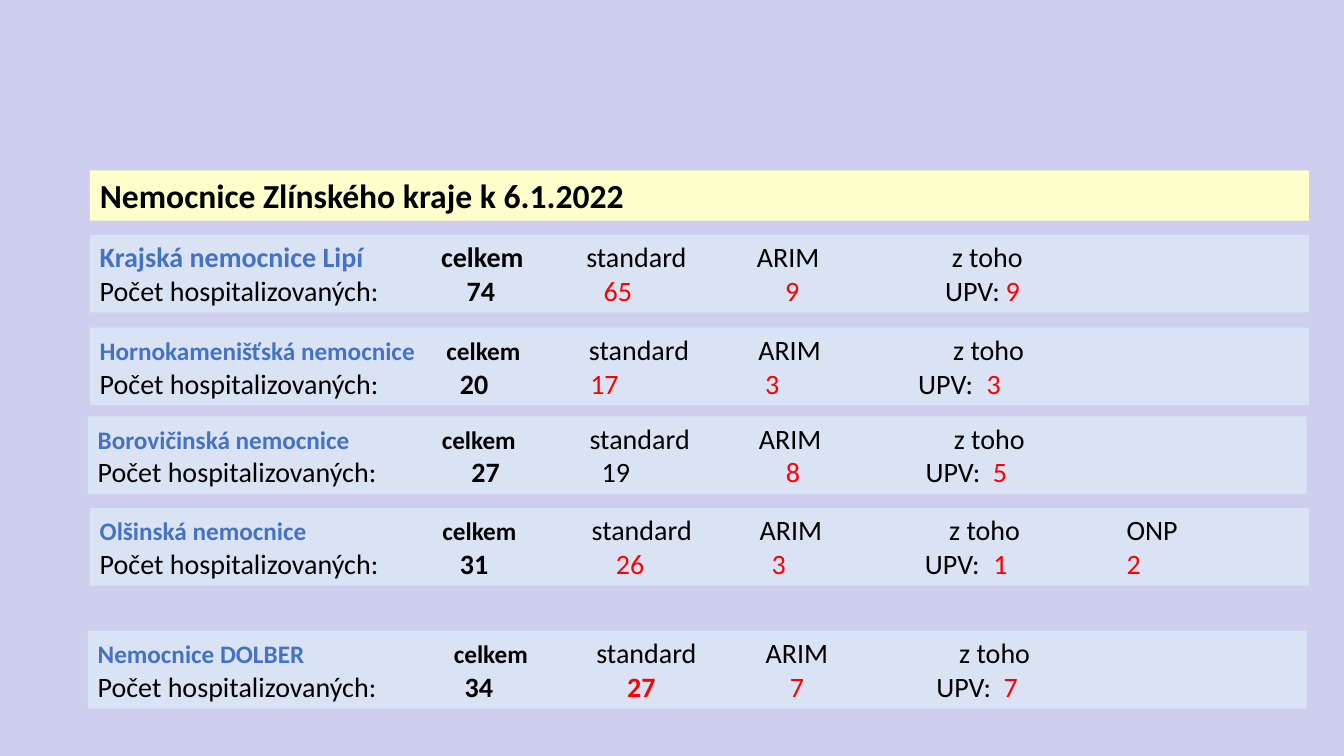
from lxml.etree import SubElement
from pptx import Presentation
from pptx.dml.color import RGBColor
from pptx.enum.shapes import MSO_SHAPE as Shape
from pptx.enum.text import MSO_ANCHOR as Anchor, MSO_AUTO_SIZE as AutoSize, PP_ALIGN as Align
from pptx.oxml.ns import qn
from pptx.util import Inches, Pt

WIDTH, HEIGHT = Inches(13.33), Inches(7.5)
BAND_WIDTH = 90.7
LEFT, LEFT_SHIFTED = 6.68, 6.53
BLACK, RED, BLUE = "000000", "FF0000", "4472C4"
HEADINGS = ["standard", "ARIM", "z toho", "ONP"]

HOSPITALS = [
    {"name": "Krajská nemocnice Lipí", "size": 20, "left": LEFT, "top": 31.07,
     "heading_stops": [25.4, 36.2, 48.9, 63.4],
     "value_stops": [27.3, 37.5, 51, 62.9, 67.4],
     "total": "74", "standard": ("65", RED, False), "others": ["9", "9"]},
    {"name": "Hornokamenišťská nemocnice", "size": 18, "left": LEFT, "top": 43.33,
     "heading_stops": [25.8, 36.4, 49, 63.5],
     "value_stops": [26.8, 36.5, 49.5, 60.9, 66],
     "total": "20", "standard": ("17", RED, False), "others": ["3", "3"]},
    {"name": "Borovičinská nemocnice", "size": 18, "left": LEFT_SHIFTED, "top": 55.07,
     "heading_stops": [25.6, 36.6, 49.2, 63.7],
     "value_stops": [27.8, 37.5, 51.2, 61.6, 66.6],
     "total": "27", "standard": ("19", BLACK, False), "others": ["8", "5"]},
    {"name": "Olšinská nemocnice", "size": 18, "left": LEFT, "top": 67.2,
     "heading_stops": [25.5, 36.6, 49.1, 63.2, 76.4],
     "value_stops": [26.8, 38.4, 50, 61.4, 66.5, 76.4],
     "total": "31", "standard": ("26", RED, False), "others": ["3", "1", "2"]},
    {"name": "Nemocnice DOLBER", "size": 18, "left": LEFT_SHIFTED, "top": 83.47,
     "heading_stops": [26.5, 37.1, 49.7, 64.1],
     "value_stops": [27.3, 39.4, 51.5, 62.4, 67.4],
     "total": "34", "standard": ("27", RED, True), "others": ["7", "7"]},
]


def across(percent):
    return round(WIDTH * percent / 100)


def down(percent):
    return round(HEIGHT * percent / 100)


def paint(target, color):
    target.fill.solid()
    target.fill.fore_color.rgb = RGBColor.from_string(color)


def add_span(para, text, size=20, color=BLACK, bold=False):
    span = para.add_run()
    span.text = text
    formats = {"name": "Calibri", "size": Pt(size), "bold": bold}
    for name, value in formats.items():
        setattr(span.font, name, value)
    span.font.color.rgb = RGBColor.from_string(color)


def set_stops(para, stops):
    tab_list = SubElement(para._p.get_or_add_pPr(), qn("a:tabLst"))
    for stop in stops:
        SubElement(tab_list, qn("a:tab"), pos=str(across(stop)), algn="l")


def format_frame(frame, anchor):
    formats = {"word_wrap": True, "vertical_anchor": anchor, "auto_size": AutoSize.NONE}
    for name, value in formats.items():
        setattr(frame, name, value)
    frame.paragraphs[0].alignment = Align.LEFT


def place_title(page, text):
    title = page.shapes.title
    bounds = {"left": across(LEFT), "top": down(22.53),
              "width": across(BAND_WIDTH), "height": down(6.67)}
    for name, value in bounds.items():
        setattr(title, name, value)
    paint(title, "FFFFCC")
    format_frame(title.text_frame, Anchor.MIDDLE)
    add_span(title.text_frame.paragraphs[0], text, 24, bold=True)


def add_hospital(page, hospital):
    box = page.shapes.add_shape(Shape.RECTANGLE, across(hospital["left"]), down(hospital["top"]),
                                across(BAND_WIDTH), down(10.27))
    box.shadow.inherit = False
    box.line.fill.background()
    paint(box, "DAE3F3")
    frame = box.text_frame
    format_frame(frame, Anchor.TOP)

    heading = frame.paragraphs[0]
    set_stops(heading, hospital["heading_stops"])
    add_span(heading, hospital["name"], hospital["size"], BLUE, True)
    add_span(heading, "\tcelkem", hospital["size"], bold=True)
    for label in HEADINGS[:len(hospital["heading_stops"]) - 1]:
        add_span(heading, "\t" + label)

    values = frame.add_paragraph()
    values.alignment = Align.LEFT
    set_stops(values, hospital["value_stops"])
    add_span(values, "Počet hospitalizovaných:")
    add_span(values, "\t" + hospital["total"], bold=True)
    standard, color, bold = hospital["standard"]
    add_span(values, "\t" + standard, color=color, bold=bold)
    intensive, *rest = hospital["others"]
    add_span(values, "\t" + intensive, color=RED)
    add_span(values, "\tUPV:")
    for number in rest:
        add_span(values, "\t" + number, color=RED)


def main():
    deck = Presentation()
    deck.slide_width, deck.slide_height = WIDTH, HEIGHT
    page = deck.slides.add_slide(deck.slide_layouts[5])
    paint(page.background, "CECEEF")
    place_title(page, "Nemocnice Zlínského kraje k 6.1.2022")
    for hospital in HOSPITALS:
        add_hospital(page, hospital)
    deck.save("out.pptx")


if __name__ == "__main__":
    main()
